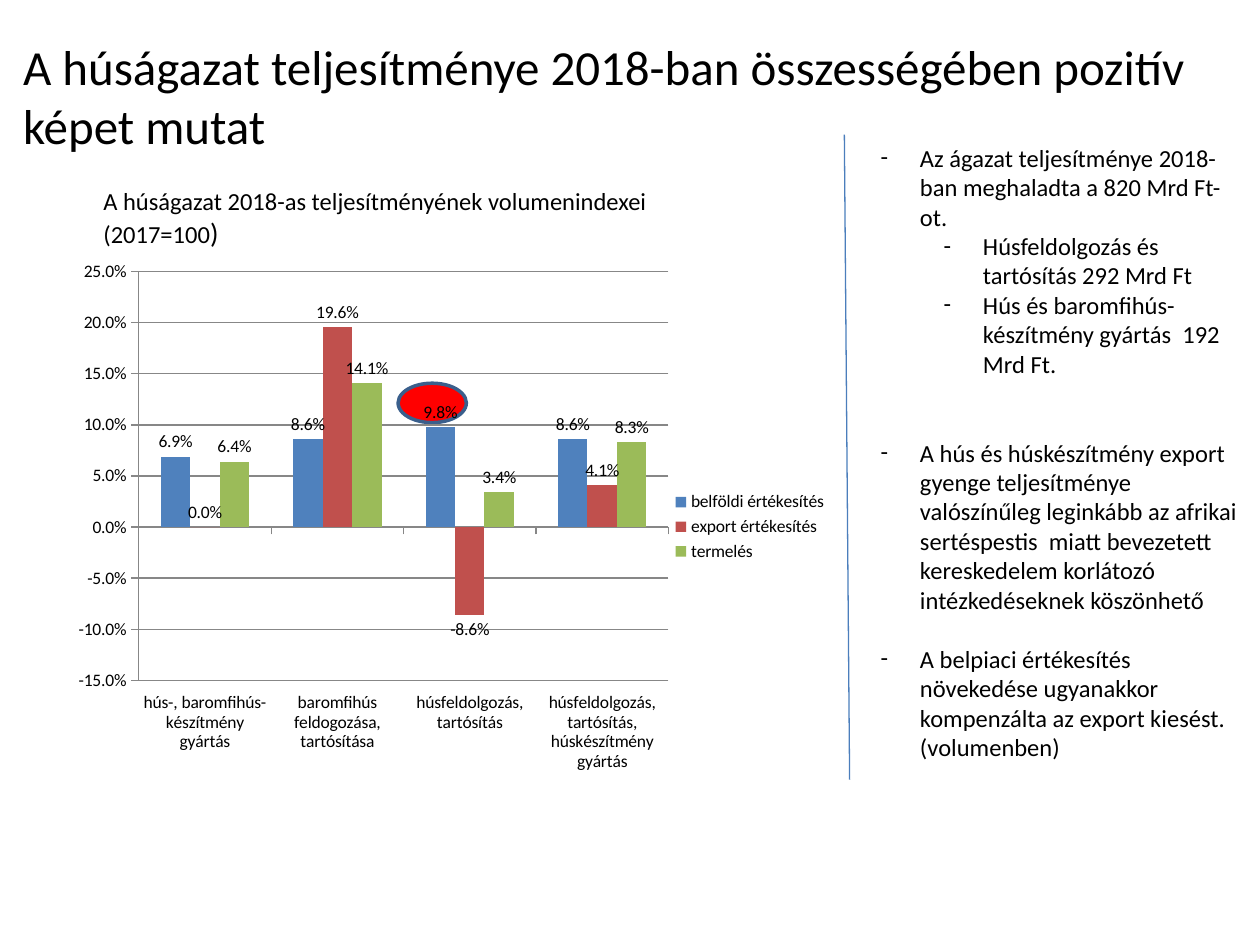
from lxml import etree
from pptx import Presentation
from pptx.chart.data import CategoryChartData
from pptx.dml.color import RGBColor
from pptx.enum.chart import (XL_CHART_TYPE, XL_LABEL_POSITION,
                             XL_LEGEND_POSITION, XL_TICK_LABEL_POSITION, XL_TICK_MARK)
from pptx.enum.shapes import MSO_CONNECTOR, MSO_SHAPE
from pptx.enum.text import MSO_ANCHOR, MSO_AUTO_SIZE, PP_ALIGN
from pptx.oxml.ns import qn
from pptx.util import Pt

COLUMNS = XL_CHART_TYPE.COLUMN_CLUSTERED
OUTSIDE_END = XL_LABEL_POSITION.OUTSIDE_END
LEGEND_RIGHT = XL_LEGEND_POSITION.RIGHT
LABELS_LOW = XL_TICK_LABEL_POSITION.LOW
TICK_OUT = XL_TICK_MARK.OUTSIDE
TICK_NONE = XL_TICK_MARK.NONE

FONT = "Calibri"
PERCENT = "0.0%"
COLORS = {"text": "000000", "highlight": "FF0000", "outline": "3A5F8C",
          "divider": "4B7EBC", "axis": "878787"}

CATEGORIES = ["hús-, baromfihús- készítmény gyártás",
              "baromfihús feldogozása, tartósítása",
              "húsfeldolgozás, tartósítás",
              "húsfeldolgozás, tartósítás, húskészítmény gyártás"]
SERIES = [("belföldi értékesítés", (0.069, 0.086, 0.098, 0.086), "4F81BD"),
          ("export értékesítés", (0, 0.196, -0.086, 0.041), "C0504D"),
          ("termelés", (0.064, 0.141, 0.034, 0.083), "9BBB59")]
PLOT_AREA = {"x": 0.141, "y": 0.027, "w": 0.649, "h": 0.758}

# Text, indent level, space before in points
FINDINGS = [
    ("Az ágazat teljesítménye 2018-ban meghaladta a 820 Mrd Ft-ot.", 0, 0),
    ("Húsfeldolgozás és tartósítás 292 Mrd Ft", 1, 0),
    ("Hús és baromfihús- készítmény gyártás  192 Mrd Ft.", 1, 0),
    ("A hús és húskészítmény export gyenge teljesítménye valószínűleg leginkább "
     "az afrikai sertéspestis  miatt bevezetett kereskedelem korlátozó "
     "intézkedéseknek köszönhető", 0, 34),
    ("A belpiaci értékesítés növekedése ugyanakkor kompenzálta az export "
     "kiesést. (volumenben)", 0, 17),
]


def color(name):
    return RGBColor.from_string(COLORS.get(name, name))


def style_font(font, size):
    font.name = FONT
    font.size = Pt(size)
    font.color.rgb = color("text")


def place(shape, box):
    shape.left, shape.top, shape.width, shape.height = map(Pt, box)


def add_title(page, box):
    title = page.shapes.title
    place(title, box)
    frame = title.text_frame
    frame.text = "A húságazat teljesítménye 2018-ban összességében pozitív képet mutat"
    frame.vertical_anchor = MSO_ANCHOR.MIDDLE
    frame.auto_size = MSO_AUTO_SIZE.NONE
    para = frame.paragraphs[0]
    para.alignment = PP_ALIGN.LEFT
    style_font(para.runs[0].font, 28)


def add_findings(page, box):
    body = page.placeholders[1]
    place(body, box)
    frame = body.text_frame
    frame.auto_size = MSO_AUTO_SIZE.NONE
    frame.text = "\n".join(text for text, _, _ in FINDINGS)
    for para, (_, level, gap) in zip(frame.paragraphs, FINDINGS):
        para.level = level
        para.space_before = Pt(gap)
        style_font(para.runs[0].font, 14)
        # Dash bullet with a hanging indent
        properties = para._p.get_or_add_pPr()
        properties.set("marL", str(Pt(22.5 + 36 * level)))
        properties.set("indent", str(-Pt(22.5)))
        etree.SubElement(properties, qn("a:buFont"), typeface=FONT)
        etree.SubElement(properties, qn("a:buChar"), char="-")


def add_chart_heading(page, box):
    frame = page.shapes.add_textbox(*map(Pt, box)).text_frame
    frame.word_wrap = True
    para = frame.paragraphs[0]
    for text, size in [("A húságazat 2018-as teljesítményének volumenindexei (2017=100", 14),
                       (")", 16)]:
        span = para.add_run()
        span.text = text
        style_font(span.font, size)


def add_highlight(page, box):
    ellipse = page.shapes.add_shape(MSO_SHAPE.OVAL, *map(Pt, box))
    ellipse.shadow.inherit = False
    ellipse.fill.solid()
    ellipse.fill.fore_color.rgb = color("highlight")
    ellipse.line.color.rgb = color("outline")
    ellipse.line.width = Pt(2)


def add_divider(page, start, end):
    divider = page.shapes.add_connector(MSO_CONNECTOR.STRAIGHT, *map(Pt, start + end))
    divider.line.color.rgb = color("divider")
    divider.line.width = Pt(0.75)
    etree.SubElement(divider._element.spPr, qn("a:effectLst"))


def set_plot_area(chart):
    plot_area = chart._chartSpace.chart.plotArea
    layout = plot_area.find(qn("c:layout"))
    if layout is None:
        layout = etree.Element(qn("c:layout"))
        plot_area.insert(0, layout)
    manual = etree.SubElement(layout, qn("c:manualLayout"))
    settings = {"layoutTarget": "inner", "xMode": "edge", "yMode": "edge", **PLOT_AREA}
    for name, value in settings.items():
        etree.SubElement(manual, qn(f"c:{name}"), val=str(value))


def add_performance_chart(page, box):
    data = CategoryChartData(number_format=PERCENT)
    data.categories = CATEGORIES
    for name, values, _ in SERIES:
        data.add_series(name, values)
    chart = page.shapes.add_chart(COLUMNS, *map(Pt, box), data).chart
    chart.has_title = False
    style_font(chart.font, 10)
    set_plot_area(chart)

    # Columns and their labels
    plot = chart.plots[0]
    plot.gap_width = 150
    plot.overlap = 0
    plot.vary_by_categories = False
    for series, (_, _, fill) in zip(plot.series, SERIES):
        series.invert_if_negative = False
        series.format.fill.solid()
        series.format.fill.fore_color.rgb = color(fill)
        labels = series.data_labels
        labels.show_value = True
        labels.number_format = PERCENT
        labels.number_format_is_linked = False
        labels.position = OUTSIDE_END
        style_font(labels.font, 10)

    # Axes
    values = chart.value_axis
    values.minimum_scale, values.maximum_scale, values.major_unit = -0.15, 0.25, 0.05
    values.tick_labels.number_format = PERCENT
    values.tick_labels.number_format_is_linked = False
    values.has_major_gridlines = True
    chart.category_axis.tick_label_position = LABELS_LOW
    for axis in (values, chart.category_axis):
        axis.major_tick_mark = TICK_OUT
        axis.minor_tick_mark = TICK_NONE
        style_font(axis.tick_labels.font, 10)
    for line in (values.format.line, chart.category_axis.format.line,
                 values.major_gridlines.format.line):
        line.color.rgb = color("axis")
        line.width = Pt(0.75)

    # Legend
    chart.has_legend = True
    chart.legend.position = LEGEND_RIGHT
    chart.legend.include_in_layout = False
    style_font(chart.legend.font, 10)


def main():
    deck = Presentation()
    deck.slide_width, deck.slide_height = Pt(720), Pt(540)
    page = deck.slides.add_slide(deck.slide_layouts[1])
    add_highlight(page, (227.5, 219, 39, 22.5))
    add_title(page, (6, 9.5, 700, 90))
    add_chart_heading(page, (52, 103, 391, 44))
    add_findings(page, (496, 78, 224, 397))
    add_divider(page, (482.5, 77), (485.5, 445.5))
    add_performance_chart(page, (13.5, 147, 466.5, 308))
    deck.save("out.pptx")


if __name__ == "__main__":
    main()
